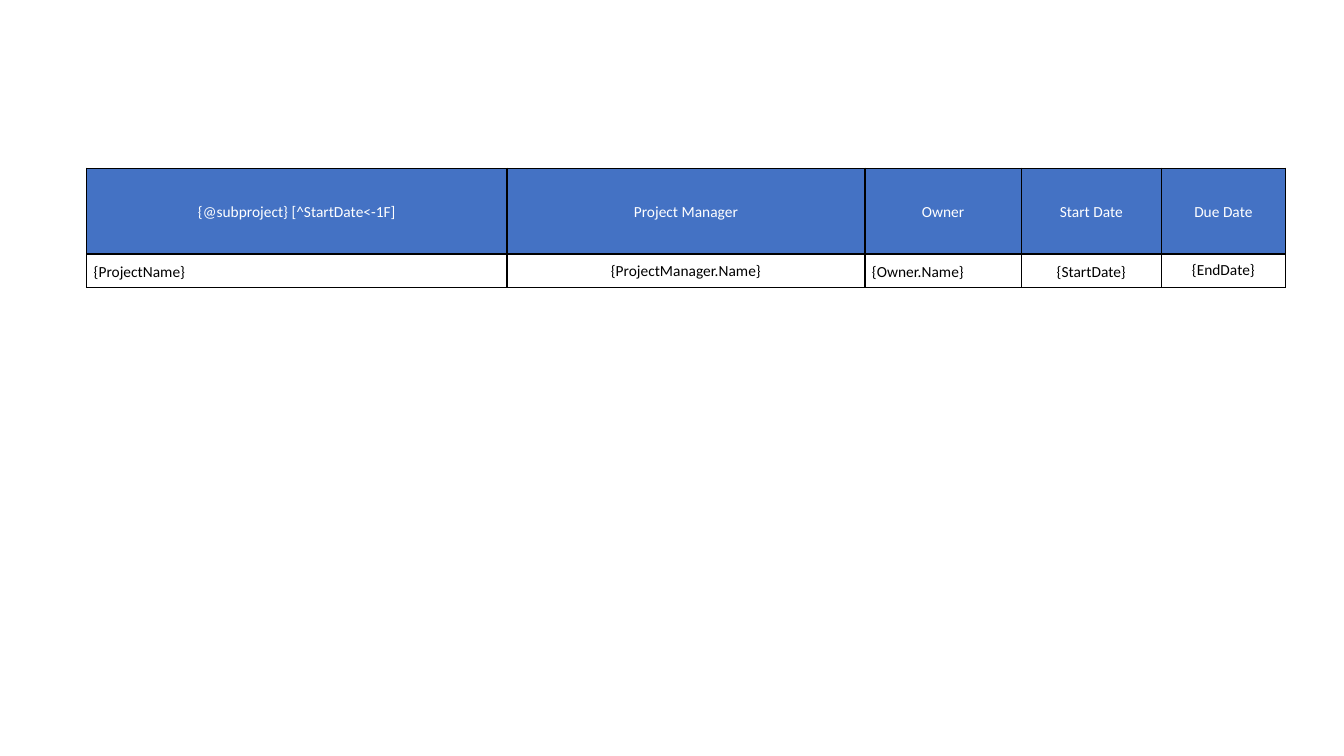
from dataclasses import dataclass

from lxml import etree
from pptx import Presentation
from pptx import util as u
from pptx.dml.color import RGBColor
from pptx.enum import text
from pptx.oxml import ns
from pptx.table import Table, _Cell

BLUE = RGBColor(0x44, 0x72, 0xC4)
WHITE = RGBColor(0xFF, 0xFF, 0xFF)
BLACK = RGBColor(0x00, 0x00, 0x00)

WIDE = u.Inches(13.33)
HIGH = u.Inches(7.5)
LEFT, TOP = 6.45, 22.27
ROWS = (11.33, 4.4)
MID = text.PP_ALIGN.CENTER
START = text.PP_ALIGN.LEFT


@dataclass(frozen=True)
class Entry:
    words: str
    align: text.PP_ALIGN = MID
    lead: float = 1.15
    gap: float = 6


@dataclass(frozen=True)
class Column:
    share: float
    head: Entry
    body: Entry


COLUMNS = (
    Column(31.28, Entry("{@subproject} [^StartDate<-1F]", lead=1.07, gap=0),
           Entry("{ProjectName}", START)),
    Column(26.63, Entry("Project Manager"),
           Entry("{ProjectManager.Name}", lead=1.07, gap=0)),
    Column(11.63, Entry("Owner"), Entry("{Owner.Name}", START)),
    Column(10.43, Entry("Start Date"), Entry("{StartDate}")),
    Column(9.23, Entry("Due Date"), Entry("{EndDate}", lead=1, gap=0)),
)


def across(share: float) -> int:
    return round(WIDE * share / 100)


def down(share: float) -> int:
    return round(HIGH * share / 100)


def frame(cell: _Cell) -> None:
    props = cell._tc.get_or_add_tcPr()
    for rank, side in enumerate(("lnL", "lnR", "lnT", "lnB")):
        line = etree.Element(ns.qn(f"a:{side}"), w=str(u.Pt(1)))
        fill = etree.SubElement(line, ns.qn("a:solidFill"))
        etree.SubElement(fill, ns.qn("a:srgbClr"), val=str(BLACK))
        props.insert(rank, line)


def write(cell: _Cell, entry: Entry, ink: RGBColor) -> None:
    cell.vertical_anchor = text.MSO_ANCHOR.MIDDLE
    cell.margin_left = cell.margin_right = u.Inches(0.07)
    cell.margin_top = cell.margin_bottom = 0
    para = cell.text_frame.paragraphs[0]
    para.alignment = entry.align
    para.line_spacing = float(entry.lead)
    para.space_before = para.space_after = u.Pt(entry.gap)
    run = para.add_run()
    run.text = entry.words
    run.font.name = "Calibri"
    run.font.size = u.Pt(11)
    run.font.bold = False
    run.font.color.rgb = ink


def fill(table: Table) -> None:
    table.first_row = table.horz_banding = False
    for row, share in zip(table.rows, ROWS):
        row.height = down(share)
    for place, column in enumerate(COLUMNS):
        table.columns[place].width = across(column.share)
        head, body = table.cell(0, place), table.cell(1, place)
        head.fill.solid()
        head.fill.fore_color.rgb = BLUE
        body.fill.background()
        write(head, column.head, WHITE)
        write(body, column.body, BLACK)
        frame(head)
        frame(body)


def main() -> None:
    deck = Presentation()
    deck.slide_width, deck.slide_height = WIDE, HIGH
    slide = deck.slides.add_slide(deck.slide_layouts.get_by_name("Blank"))
    span = sum(column.share for column in COLUMNS)
    grid = slide.shapes.add_table(
        len(ROWS), len(COLUMNS), across(LEFT), down(TOP), across(span), down(sum(ROWS)))
    fill(grid.table)
    deck.save("out.pptx")


if __name__ == "__main__":
    main()
